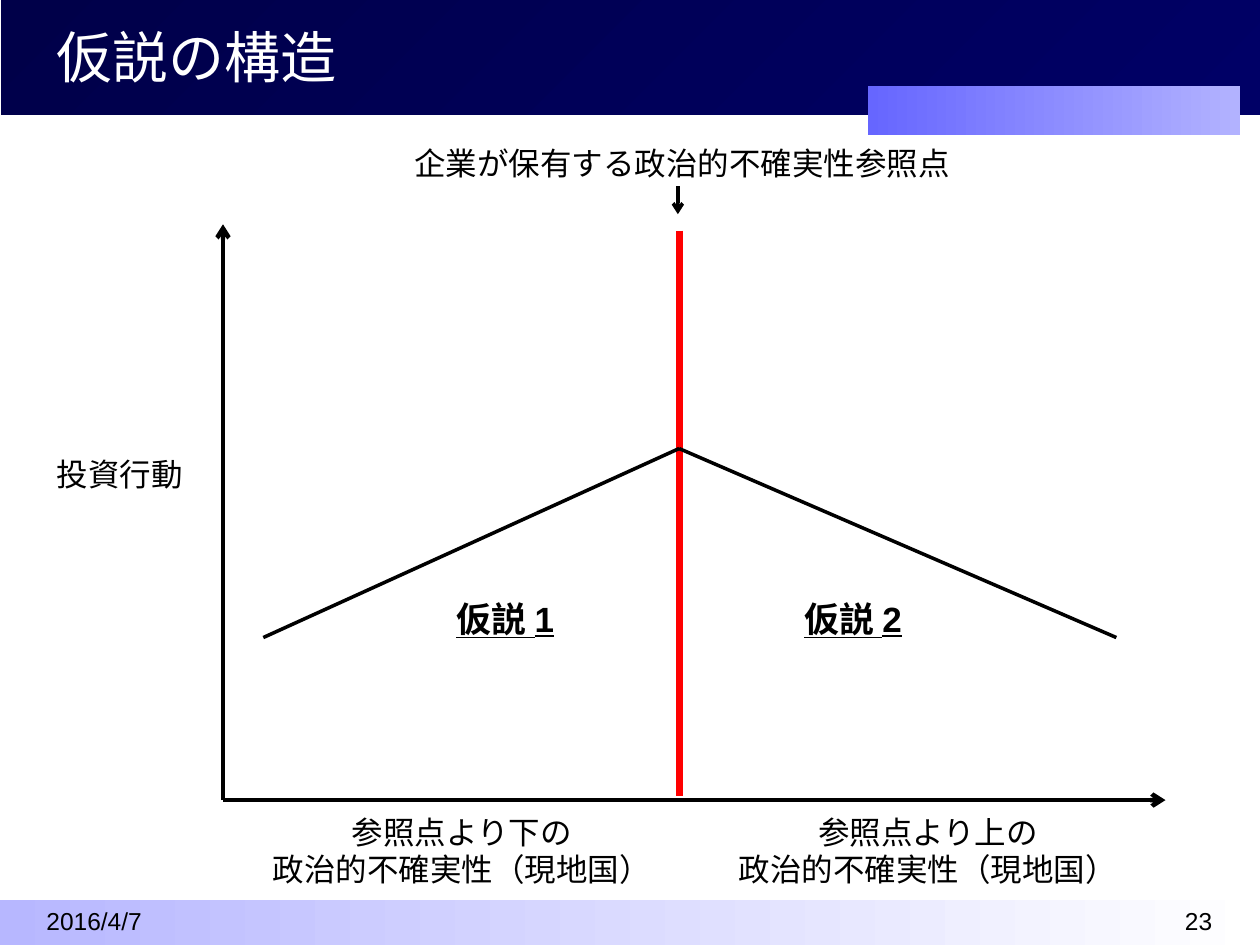
from typing import NamedTuple

from lxml import etree
from pptx import Presentation
from pptx import util as u
from pptx.dml.color import RGBColor
from pptx.enum import shapes, text
from pptx.oxml import ns

BLACK = RGBColor(0x00, 0x00, 0x00)
WHITE = RGBColor(0xFF, 0xFF, 0xFF)
RED = RGBColor(0xFF, 0x00, 0x00)
NIGHT = RGBColor(0x00, 0x00, 0x49)
NAVY = RGBColor(0x00, 0x00, 0x66)
BLUE = RGBColor(0x66, 0x66, 0xFF)
PALE = RGBColor(0xB2, 0xB2, 0xFF)
LILAC = RGBColor(0xB7, 0xB7, 0xFF)

LEFT = text.PP_ALIGN.LEFT
MID = text.PP_ALIGN.CENTER
RIGHT = text.PP_ALIGN.RIGHT
FONT = "Arial"

BASE = 6.35
AXIS = 1.77
PEAK = (5.39, 3.56)
FOOT = 5.06


class Box(NamedTuple):
    left: float
    top: float
    width: float
    height: float

    def place(self):
        return [u.Inches(n) for n in self]


class Band(NamedTuple):
    box: Box
    start: RGBColor
    end: RGBColor
    angle: int = 0


class Line(NamedTuple):
    start: tuple
    end: tuple
    width: float = 2
    color: RGBColor = BLACK
    arrow: bool = False


class Label(NamedTuple):
    words: str
    box: Box
    style: dict


BANDS = [
    Band(Box(0, 7.14, 10, 0.36), LILAC, WHITE),
    Band(Box(0.01, 0, 9.99, 0.91), NIGHT, NAVY, 315),
    Band(Box(6.89, 0.68, 2.95, 0.39), BLUE, PALE),
]

LINES = [
    Line((PEAK[0], 1.83), (PEAK[0], 6.32), 4, RED),
    Line((2.09, FOOT), PEAK),
    Line(PEAK, (8.86, FOOT)),
    Line((AXIS, BASE), (AXIS, 1.78), 2.5, arrow=True),
    Line((AXIS, BASE), (9.25, BASE), 2.5, arrow=True),
    Line((5.38, 1.48), (5.38, 1.7), arrow=True),
]

SMALL = dict(size=14, anchor=text.MSO_ANCHOR.MIDDLE)
CLAIM = dict(size=20, align=MID, bold=True, line=True)

LABELS = [
    Label("2016/4/7", Box(0.27, 7.16, 2.33, 0.29), SMALL),
    Label("23", Box(7.39, 7.16, 2.33, 0.29), dict(SMALL, align=RIGHT)),
    Label("投資行動", Box(0.35, 3.56, 1.65, 0.4), {}),
    Label("企業が保有する政治的不確実性参照点", Box(3.19, 1.09, 4.47, 0.4), {}),
    Label("参照点より下の\n政治的不確実性（現地国）",
          Box(2.01, 6.4, 3.31, 0.71), dict(align=MID)),
    Label("参照点より上の\n政治的不確実性（現地国）",
          Box(5.71, 6.4, 3.31, 0.71), dict(align=MID)),
    Label("仮説 1", Box(3.5, 4.69, 1.02, 0.44), CLAIM),
    Label("仮説 2", Box(6.26, 4.69, 1.02, 0.44), CLAIM),
]


def write(shape, words: str, *, size=18, color=BLACK, align=LEFT,
          anchor=text.MSO_ANCHOR.TOP, bold=False, line=False) -> None:
    frame = shape.text_frame
    frame.text = words
    frame.word_wrap = True
    frame.vertical_anchor = anchor
    for para in frame.paragraphs:
        para.alignment = align
        for run in para.runs:
            font = run.font
            font.name = FONT
            font.size = u.Pt(size)
            font.bold = bold
            font.underline = line
            font.color.rgb = color


def draw_band(slide, band: Band) -> None:
    shape = slide.shapes.add_shape(
        shapes.MSO_SHAPE.RECTANGLE, *band.box.place())
    shape.shadow.inherit = False
    shape.line.fill.background()
    shape.fill.gradient()
    shape.fill.gradient_angle = band.angle
    for stop, color in zip(shape.fill.gradient_stops, (band.start, band.end)):
        stop.color.rgb = color
    first, last = shape.fill.gradient_stops
    first.position, last.position = 0, 1


def draw_line(slide, item: Line) -> None:
    ends = [u.Inches(n) for n in item.start + item.end]
    wire = slide.shapes.add_connector(shapes.MSO_CONNECTOR.STRAIGHT, *ends)
    wire.line.width = u.Pt(item.width)
    wire.line.color.rgb = item.color
    if item.arrow:
        etree.SubElement(wire.line._get_or_add_ln(),
                         ns.qn("a:tailEnd"), type="arrow")
    etree.SubElement(wire.element.spPr, ns.qn("a:effectLst"))


def draw_label(slide, label: Label) -> None:
    shape = slide.shapes.add_textbox(*label.box.place())
    write(shape, label.words, **label.style)


def draw_title(slide, words: str, box: Box) -> None:
    title = slide.shapes.title
    title.left, title.top, title.width, title.height = box.place()
    write(title, words, size=32, color=WHITE, anchor=text.MSO_ANCHOR.MIDDLE)
    title.element.getparent().append(title.element)


def main() -> None:
    deck = Presentation()
    deck.slide_width = u.Inches(10)
    deck.slide_height = u.Inches(7.5)
    slide = deck.slides.add_slide(deck.slide_layouts[5])
    for band in BANDS:
        draw_band(slide, band)
    draw_title(slide, "仮説の構造", Box(0.35, -0.02, 8.11, 0.93))
    for item in LINES:
        draw_line(slide, item)
    for label in LABELS:
        draw_label(slide, label)
    deck.save("out.pptx")


if __name__ == "__main__":
    main()
